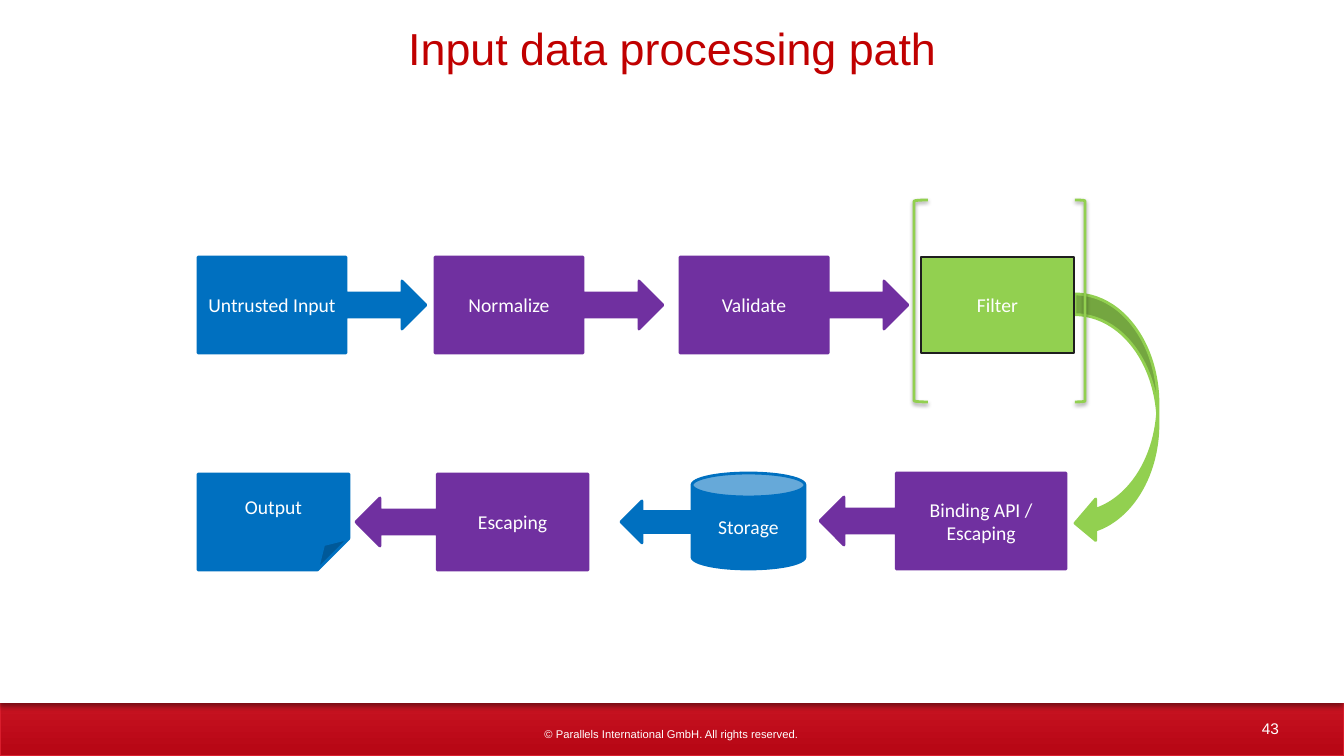
import dataclasses

import lxml.etree
import pptx
import pptx.dml.color
import pptx.enum.shapes
import pptx.enum.text
import pptx.oxml.ns
import pptx.util

SHAPES = pptx.enum.shapes.MSO_SHAPE
EMU_PER_PX = 914400 / 100.8


@dataclasses.dataclass(frozen=True)
class Theme:
    white: str = "FFFFFF"
    black: str = "000000"
    blue: str = "0070C0"
    purple: str = "7030A0"
    green: str = "92D050"
    ink: str = "1E1E1E"
    heading: str = "C00000"
    band_low: str = "B60513"
    band_high: str = "D92231"
    band_edge: str = "D91D2C"
    page_font: str = "Arial"
    step_font: str = "Calibri"
    title_size: int = 32
    step_size: int = 14
    number_size: int = 11
    legal_size: int = 8
    outline: int = 2


def px(length):
    return pptx.util.Emu(round(length * EMU_PER_PX))


def rgb(value):
    return pptx.dml.color.RGBColor.from_string(value)


def write(frame, text, *, font, size, color, inset=10, inset_y=5):
    frame.word_wrap = True
    frame.vertical_anchor = pptx.enum.text.MSO_ANCHOR.MIDDLE
    frame.margin_left = frame.margin_right = px(inset)
    frame.margin_top = frame.margin_bottom = px(inset_y)
    frame.text = text
    for paragraph in frame.paragraphs:
        paragraph.alignment = pptx.enum.text.PP_ALIGN.CENTER
        paragraph.font.name = font
        paragraph.font.size = pptx.util.Pt(size)
        paragraph.font.color.rgb = rgb(color)


class FlowSlide:
    def __init__(self, deck, theme):
        self.theme = theme
        self.slide = deck.slides.add_slide(deck.slide_layouts[6])

    def shape(self, kind, box, fill=None, line=None, line_width=None):
        item = self.slide.shapes.add_shape(kind, *map(px, box))
        item.shadow.inherit = False
        if fill:
            item.fill.solid()
            item.fill.fore_color.rgb = rgb(fill)
        else:
            item.fill.background()
        if line:
            item.line.color.rgb = rgb(line)
            item.line.width = pptx.util.Pt(line_width or self.theme.outline)
        else:
            item.line.fill.background()
        return item

    def shadow(self, item, opacity, blur, distance):
        qn = pptx.oxml.ns.qn
        effects = item._element.spPr.find(qn("a:effectLst"))
        outer = lxml.etree.SubElement(
            effects, qn("a:outerShdw"),
            blurRad=str(pptx.util.Pt(blur)), dist=str(pptx.util.Pt(distance)),
            dir="5400000", rotWithShape="0")
        color = lxml.etree.SubElement(outer, qn("a:srgbClr"), val=self.theme.black)
        lxml.etree.SubElement(color, qn("a:alpha"), val=str(opacity * 1000))

    def band(self, box):
        band = self.shape(SHAPES.RECTANGLE, box, self.theme.band_high,
                          self.theme.band_edge, 0.75)
        band.fill.gradient()
        band.fill.gradient_angle = 90
        low, high = band.fill.gradient_stops
        low.position, low.color.rgb = 0, rgb(self.theme.band_low)
        high.position, high.color.rgb = 0.8, rgb(self.theme.band_high)
        self.shadow(band, 35, 3.1, 1.8)

    def sheet(self, box):
        sheet = self.shape(SHAPES.RECTANGLE, box, self.theme.white)
        self.shadow(sheet, 40, 4, 3)

    def caption(self, text, box, size, color, **insets):
        caption = self.slide.shapes.add_textbox(*map(px, box))
        write(caption.text_frame, text, font=self.theme.page_font,
              size=size, color=color, **insets)

    def step(self, kind, box, color, text="", line=None, guides=None):
        step = self.shape(kind, box, color, line or color)
        if guides:
            qn = pptx.oxml.ns.qn
            values = step._element.spPr.find(qn("a:prstGeom")).find(qn("a:avLst"))
            for guide, share in guides.items():
                lxml.etree.SubElement(values, qn("a:gd"), name=guide,
                                      fmla=f"val {round(share * 100000)}")
        if text:
            write(step.text_frame, text, font=self.theme.step_font,
                  size=self.theme.step_size, color=self.theme.white)

    def bracket(self, kind, box):
        bracket = self.shape(kind, box, line=self.theme.green)
        self.shadow(bracket, 38, 3.1, 1.6)


def main():
    theme = Theme()
    deck = pptx.Presentation()
    deck.slide_width, deck.slide_height = px(1344), px(756)
    flow = FlowSlide(deck, theme)

    flow.band((0, 630, 1344, 126))
    flow.sheet((0, 0, 1344, 703))
    flow.caption("43", (1243, 713, 55, 31), theme.number_size, theme.white)
    flow.caption("© Parallels International GmbH. All rights reserved.",
                 (516, 728, 311, 13), theme.legal_size, theme.white, inset_y=0)
    flow.caption("Input data processing path", (43, 15, 1259, 65),
                 theme.title_size, theme.heading)

    top, bottom, height = 257, 473, 96
    for text, left, color in (("Untrusted Input", 198, theme.blue),
                              ("Normalize", 435, theme.purple),
                              ("Validate", 680, theme.purple)):
        flow.step(SHAPES.RIGHT_ARROW_CALLOUT, (left, top, 228, height), color, text)

    flow.step(SHAPES.CURVED_LEFT_ARROW, (1075, 294, 83, 250), theme.green)
    flow.step(SHAPES.RECTANGLE, (921, top, 153, height), theme.green, "Filter",
              line=theme.ink)
    flow.step(SHAPES.LEFT_ARROW_CALLOUT, (820, bottom, 246, height), theme.purple,
              "Binding API /\nEscaping",
              guides={"adj1": 0.25, "adj2": 0.25, "adj3": 0.25, "adj4": 0.69})
    flow.step(SHAPES.CAN, (692, bottom, 113, height), theme.blue, "Storage")
    flow.step(SHAPES.LEFT_ARROW, (621, 501, 72, 42), theme.blue)
    flow.step(SHAPES.LEFT_ARROW_CALLOUT, (356, bottom + 1, 232, height),
              theme.purple, "Escaping")
    flow.step(SHAPES.FOLDED_CORNER, (198, bottom + 1, 151, height), theme.blue,
              "Output", guides={"adj": 0.33})

    flow.bracket(SHAPES.LEFT_BRACKET, (914, 200, 14, 202))
    flow.bracket(SHAPES.RIGHT_BRACKET, (1075, 200, 10, 202))

    deck.save("out.pptx")


if __name__ == "__main__":
    main()
